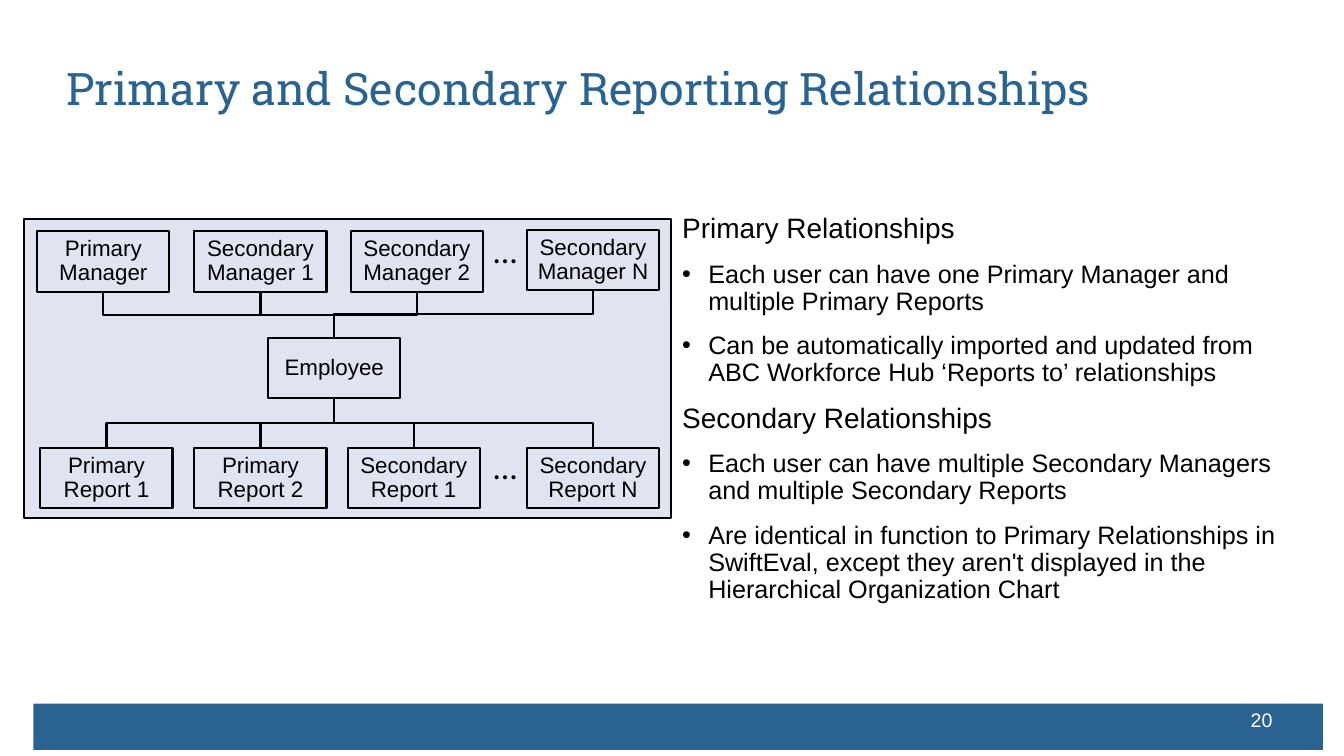
from lxml.etree import SubElement
from pptx import Presentation
from pptx.dml.color import RGBColor
from pptx.enum.shapes import MSO_CONNECTOR as Link, MSO_SHAPE as Preset
from pptx.enum.text import MSO_ANCHOR as Anchor, PP_ALIGN as Align
from pptx.oxml.ns import qn
from pptx.util import Cm, Pt

BLUE = RGBColor(0x2A, 0x63, 0x8F)
PALE = RGBColor(0xDF, 0xE4, 0xF0)
BLACK = RGBColor(0, 0, 0)
WHITE = RGBColor(0xFF, 0xFF, 0xFF)

BOX_WIDTH, BOX_HEIGHT = 3.33, 1.53
EMPLOYEE = (6.76, 8.51)
MANAGER_TOP, REPORT_TOP = 5.82, 11.28
MANAGERS = [
    ("Primary Manager", 0.94, MANAGER_TOP),
    ("Secondary Manager 1", 4.9, MANAGER_TOP),
    ("Secondary Manager 2", 8.84, MANAGER_TOP),
    ("Secondary Manager N", 13.28, 5.79),
]
REPORTS = [
    ("Primary Report 1", 1.02, REPORT_TOP),
    ("Primary Report 2", 4.9, REPORT_TOP),
    ("Secondary Report 1", 8.76, REPORT_TOP),
    ("Secondary Report N", 13.28, REPORT_TOP),
]
RELATIONSHIPS = {
    "Primary Relationships": [
        "Each user can have one Primary Manager and multiple Primary Reports",
        "Can be automatically imported and updated from\v"
        "ABC Workforce Hub ‘Reports to’ relationships",
    ],
    "Secondary Relationships": [
        "Each user can have multiple Secondary Managers and multiple Secondary Reports",
        "Are identical in function to Primary Relationships in SwiftEval, "
        "except they aren't displayed in the Hierarchical Organization Chart",
    ],
}


def apply(target, values):
    for name, value in values.items():
        setattr(target, name, value)


class SlideBuilder:
    def __init__(self, page, font="Arial", line_width=1.5):
        self.page = page
        self.font = font
        self.line_width = Pt(line_width)

    def fill_para(self, para, text, size, color=BLACK, font=None, **layout):
        para.text = text
        apply(para, {"line_spacing": 0.9, **layout})
        for span in para.runs:
            apply(span.font, {"name": font or self.font, "size": Pt(size)})
            span.font.color.rgb = color

    def rectangle(self, left, top, width, height, fill=None, outlined=True):
        box = self.page.shapes.add_shape(
            Preset.RECTANGLE, Cm(left), Cm(top), Cm(width), Cm(height))
        box.shadow.inherit = False
        if fill is None:
            box.fill.background()
        else:
            box.fill.solid()
            box.fill.fore_color.rgb = fill
        if outlined:
            box.line.color.rgb = BLACK
            box.line.width = self.line_width
        else:
            box.line.fill.background()
        return box

    def role(self, text, left, top):
        """Draw one labelled box of the organization diagram."""
        frame = self.rectangle(left, top, BOX_WIDTH, BOX_HEIGHT).text_frame
        apply(frame, {"word_wrap": True, "vertical_anchor": Anchor.MIDDLE})
        self.fill_para(frame.paragraphs[0], text, 16, alignment=Align.CENTER)

    def text_frame(self, left, top, width, height, anchor=Anchor.TOP):
        box = self.page.shapes.add_textbox(Cm(left), Cm(top), Cm(width), Cm(height))
        apply(box.text_frame, {"word_wrap": True, "vertical_anchor": anchor})
        return box.text_frame

    def text(self, text, place, size, anchor=Anchor.TOP, **style):
        para = self.text_frame(*place, anchor).paragraphs[0]
        self.fill_para(para, text, size, **style)

    def bullet(self, para):
        props = para._p.get_or_add_pPr()
        props.set("marL", str(Cm(0.66)))
        props.set("indent", str(-Cm(0.66)))
        SubElement(props, qn("a:buFont")).set("typeface", self.font)
        SubElement(props, qn("a:buChar")).set("char", "•")

    def sections(self, content, place):
        """Lay out headings, each followed by its bulleted points."""
        frame = self.text_frame(*place)
        lines = [(text, text == heading)
                 for heading, points in content.items()
                 for text in [heading, *points]]
        for index, (text, is_heading) in enumerate(lines):
            para = frame.add_paragraph() if index else frame.paragraphs[0]
            if not is_heading:
                self.bullet(para)
            self.fill_para(para, text, 20 if is_heading else 18, space_after=Pt(12))

    def elbow(self, x1, y1, x2, y2):
        """Join two points by a line that leaves and arrives vertically."""
        middle_x, middle_y = (x1 + x2) / 2, (y1 + y2) / 2
        goes_right = x2 > x1
        run = (y2 - y1) / 2 * (-1 if goes_right else 1)
        rise = abs(x2 - x1) / 2
        line = self.page.shapes.add_connector(
            Link.ELBOW, Cm(middle_x - run), Cm(middle_y - rise),
            Cm(middle_x + run), Cm(middle_y + rise))
        turn = 270 if goes_right else 90
        line._element.spPr.find(qn("a:xfrm")).set("rot", str(turn * 60000))
        line.line.color.rgb = BLACK
        line.line.width = self.line_width
        SubElement(line._element.spPr, qn("a:effectLst"))


def main():
    deck = Presentation()
    apply(deck, {"slide_width": Cm(33.87), "slide_height": Cm(19.05)})
    slide = SlideBuilder(deck.slides.add_slide(deck.slide_layouts[6]))

    slide.rectangle(0.84, 17.73, 32.5, 1.17, BLUE, outlined=False)
    slide.text("20", (31.27, 17.7, 1.2, 0.94), 14, Anchor.MIDDLE, color=WHITE)
    slide.text("Primary and Secondary Reporting Relationships",
               (1.42, 0.69, 31.04, 2.34), 32, Anchor.BOTTOM,
               color=BLUE, font="Roboto Slab")

    slide.rectangle(0.61, 5.51, 16.31, 7.54, PALE)
    employee_left, employee_top = EMPLOYEE
    center = employee_left + BOX_WIDTH / 2
    slide.role("Employee", *EMPLOYEE)
    for name, left, top in MANAGERS:
        slide.role(name, left, top)
        slide.elbow(left + BOX_WIDTH / 2, top + BOX_HEIGHT, center, employee_top)
    for name, left, top in REPORTS:
        slide.role(name, left, top)
        slide.elbow(center, employee_top + BOX_HEIGHT, left + BOX_WIDTH / 2, top)
    for top in (5.79, 11.23):
        slide.text("…", (11.73, top, 2.01, 0.97), 24,
                   font="Calibri", alignment=Align.CENTER)

    slide.sections(RELATIONSHIPS, (16.94, 5.28, 16.48, 10.16))
    deck.save("out.pptx")


if __name__ == "__main__":
    main()
